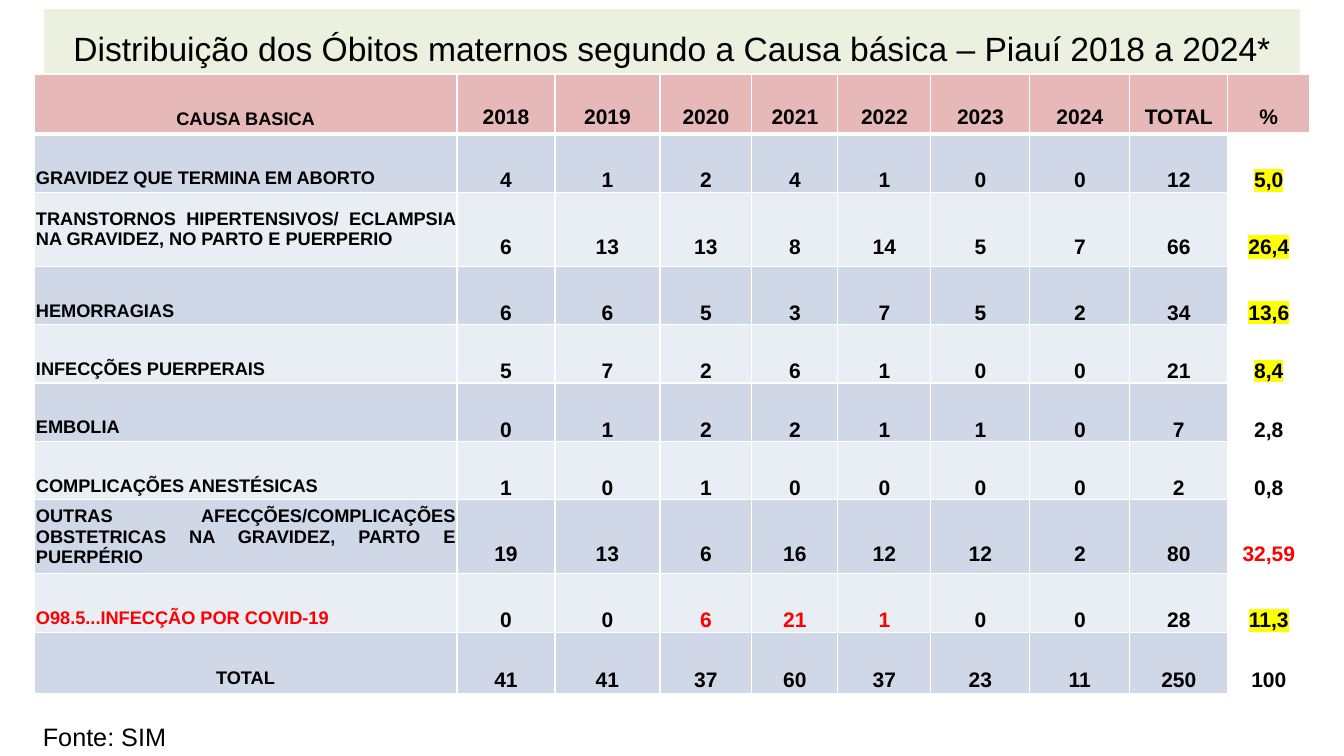
from dataclasses import dataclass

from lxml.etree import SubElement
from pptx import Presentation
from pptx.dml.color import RGBColor
from pptx.enum.text import MSO_ANCHOR, MSO_AUTO_SIZE, PP_ALIGN
from pptx.oxml import parse_xml
from pptx.oxml.ns import nsdecls, qn
from pptx.util import Emu, Pt

EMU_PER_PX = 914400 / 100.8


def px(length):
    return Emu(round(length * EMU_PER_PX))


@dataclass(frozen=True)
class Theme:
    font: str = "Arial"
    ink: str = "000000"
    alert: str = "FF0000"
    marker: str = "FFFF00"
    paper: str = "FFFFFF"
    title_fill: str = "EBF1DE"
    header_fill: str = "E6B9B8"
    bands: tuple = ("D0D8E8", "E9EDF4")
    title_size: int = 24
    note_size: int = 18
    label_size: int = 13
    figure_size: int = 15
    thin: int = 1
    thick: int = 3


# Table content: cause, then the years, the total and the percentage
HEADER = ["CAUSA BASICA", *"2018 2019 2020 2021 2022 2023 2024 TOTAL %".split()]
CAUSES = [
    ("GRAVIDEZ QUE TERMINA EM ABORTO", "4 1 2 4 1 0 0 12 5,0"),
    ("TRANSTORNOS HIPERTENSIVOS/ ECLAMPSIA NA GRAVIDEZ, NO PARTO E PUERPERIO",
     "6 13 13 8 14 5 7 66 26,4"),
    ("HEMORRAGIAS", "6 6 5 3 7 5 2 34 13,6"),
    ("INFECÇÕES PUERPERAIS", "5 7 2 6 1 0 0 21 8,4"),
    ("EMBOLIA", "0 1 2 2 1 1 0 7 2,8"),
    ("COMPLICAÇÕES ANESTÉSICAS", "1 0 1 0 0 0 0 2 0,8"),
    ("OUTRAS AFECÇÕES/COMPLICAÇÕES OBSTETRICAS NA GRAVIDEZ, PARTO E PUERPÉRIO",
     "19 13 6 16 12 12 2 80 32,59"),
    ("O98.5...INFECÇÃO POR COVID-19", "0 0 6 21 1 0 0 28 11,3"),
    ("TOTAL", "41 41 37 60 37 23 11 250 100"),
]
ROWS = [HEADER] + [[cause, *figures.split()] for cause, figures in CAUSES]
COLUMN_WIDTHS = [423, 98, 105, 92, 86, 93, 99, 100, 98, 82]
ROW_HEIGHTS = [60, 56, 74, 55, 55, 55, 55, 74, 55, 61]
TOTAL_ROW = len(ROWS) - 1
PERCENT_COLUMN = len(HEADER) - 1
LONG_LABEL = 40
RED_CELLS = {(7, 9), (8, 0), (8, 3), (8, 4), (8, 5)}
MARKED_ROWS = {1, 2, 3, 4, 8}


class SlideBuilder:
    def __init__(self, deck, theme):
        self.theme = theme
        self.page = deck.slides.add_slide(deck.slide_layouts[5])

    def style(self, para, size, color, bold=False, align=None):
        para.alignment = align
        for span in para.runs:
            span.font.name = self.theme.font
            span.font.size = Pt(size)
            span.font.bold = bold
            span.font.color.rgb = RGBColor.from_string(color)

    def title(self, text, left, top, width, height):
        box = self.page.shapes.title
        box.left, box.top, box.width, box.height = map(px, (left, top, width, height))
        box.fill.solid()
        box.fill.fore_color.rgb = RGBColor.from_string(self.theme.title_fill)
        frame = box.text_frame
        frame.text = text
        frame.auto_size = MSO_AUTO_SIZE.NONE
        frame.vertical_anchor = MSO_ANCHOR.MIDDLE
        self.style(frame.paragraphs[0], self.theme.title_size, self.theme.ink,
                   align=PP_ALIGN.CENTER)

    def note(self, text, left, top, width, height):
        box = self.page.shapes.add_textbox(*map(px, (left, top, width, height)))
        frame = box.text_frame
        frame.text = text
        frame.word_wrap = False
        frame.auto_size = MSO_AUTO_SIZE.SHAPE_TO_FIT_TEXT
        self.style(frame.paragraphs[0], self.theme.note_size, self.theme.ink)

    def table(self, rows, left, top, height):
        frame = self.page.shapes.add_table(
            len(rows), len(rows[0]), px(left), px(top),
            px(sum(COLUMN_WIDTHS)), px(height))
        grid = frame.table
        grid.horz_banding = False
        for column, width in zip(grid.columns, COLUMN_WIDTHS):
            column.width = px(width)
        for line, row_height in zip(grid.rows, ROW_HEIGHTS):
            line.height = px(row_height)
        frame.height = px(height)
        for row, texts in enumerate(rows):
            for column, text in enumerate(texts):
                self.cell(grid.cell(row, column), row, column, text)

    def cell(self, cell, row, column, text):
        theme = self.theme
        is_header, is_label = row == 0, column == 0
        is_percent = column == PERCENT_COLUMN

        # Fill, margins and borders
        if is_header:
            fill, side, edge = theme.header_fill, 10, 5
        else:
            fill = theme.paper if is_percent else theme.bands[(row - 1) % 2]
            wide = is_percent or (column >= 4 and row != TOTAL_ROW)
            side, edge = (5 if wide else 2), 0
        cell.fill.solid()
        cell.fill.fore_color.rgb = RGBColor.from_string(fill)
        cell.margin_left = cell.margin_right = px(side)
        cell.margin_top = cell.margin_bottom = px(edge)
        cell.vertical_anchor = MSO_ANCHOR.BOTTOM if is_header else MSO_ANCHOR.MIDDLE
        self.borders(cell, row)

        # Text
        cell.text_frame.text = text
        para = cell.text_frame.paragraphs[0]
        justified = is_label and row not in (0, TOTAL_ROW)
        self.style(para, theme.label_size if is_label else theme.figure_size,
                   theme.alert if (row, column) in RED_CELLS else theme.ink, True,
                   PP_ALIGN.JUSTIFY if justified else PP_ALIGN.CENTER)
        if not is_header and len(text) < LONG_LABEL:
            para.line_spacing = 2.5
        if is_percent and row in MARKED_ROWS:
            self.highlight(para.runs[0])

    def borders(self, cell, row):
        properties = cell._tc.get_or_add_tcPr()
        for position, side in enumerate("LRTB"):
            heavy = (row, side) in {(0, "B"), (1, "T")}
            width = Pt(self.theme.thick if heavy else self.theme.thin)
            properties.insert(position, parse_xml(
                f'<a:ln{side} {nsdecls("a")} w="{width}"><a:solidFill>'
                f'<a:srgbClr val="{self.theme.paper}"/></a:solidFill></a:ln{side}>'))

    def highlight(self, span):
        properties = span._r.get_or_add_rPr()
        marker = SubElement(properties, qn("a:highlight"))
        SubElement(marker, qn("a:srgbClr")).set("val", self.theme.marker)
        properties.find(qn("a:solidFill")).addnext(marker)


def main():
    deck = Presentation()
    deck.slide_width, deck.slide_height = px(1344), px(756)
    builder = SlideBuilder(deck, Theme())
    builder.title("Distribuição dos Óbitos maternos segundo a Causa básica – Piauí 2018 a 2024*",
                  44, 9, 1256, 78)
    builder.table(ROWS, 34, 74, 648)
    builder.note("Fonte: SIM", 33, 716, 145, 40)
    deck.save("out.pptx")


if __name__ == "__main__":
    main()
